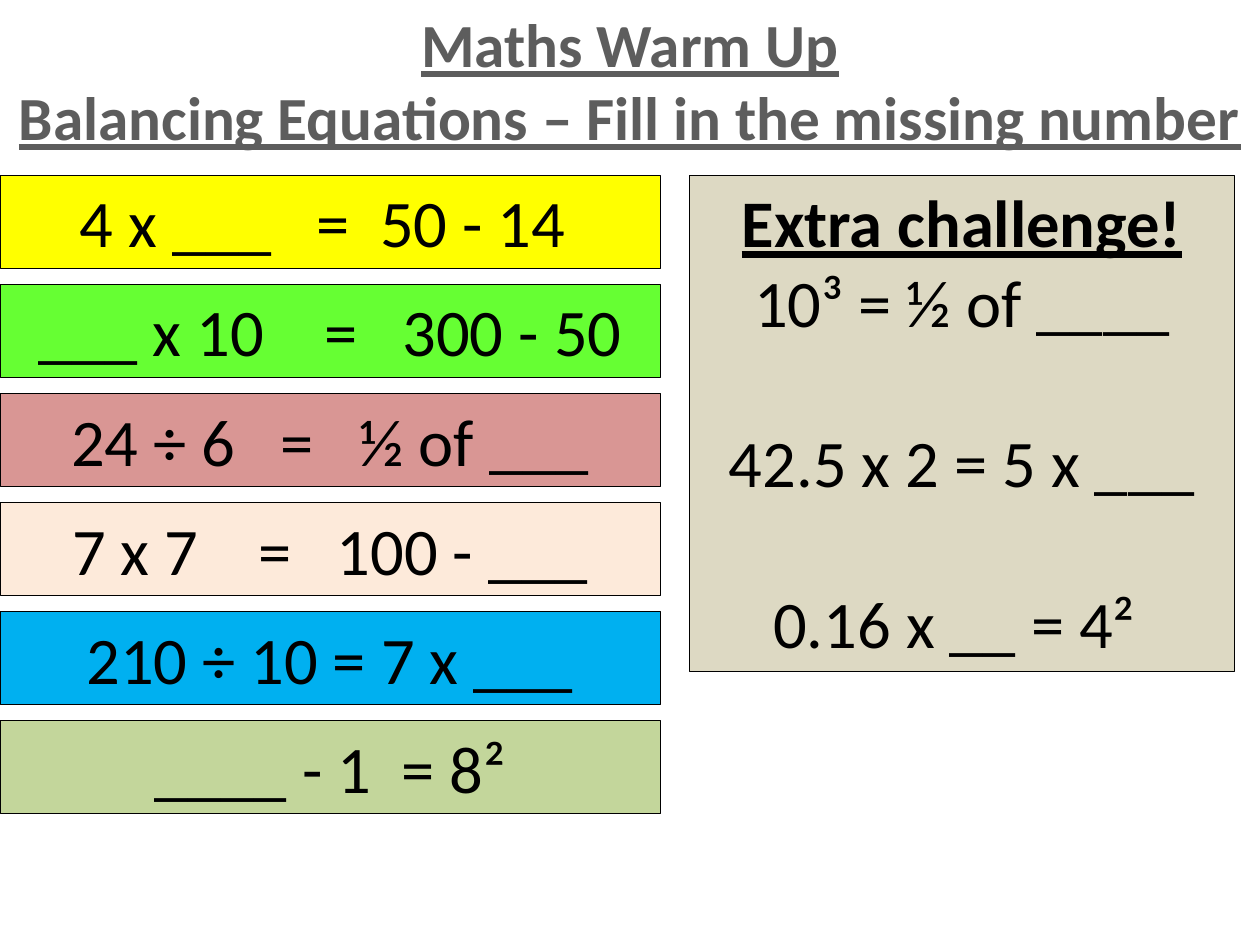
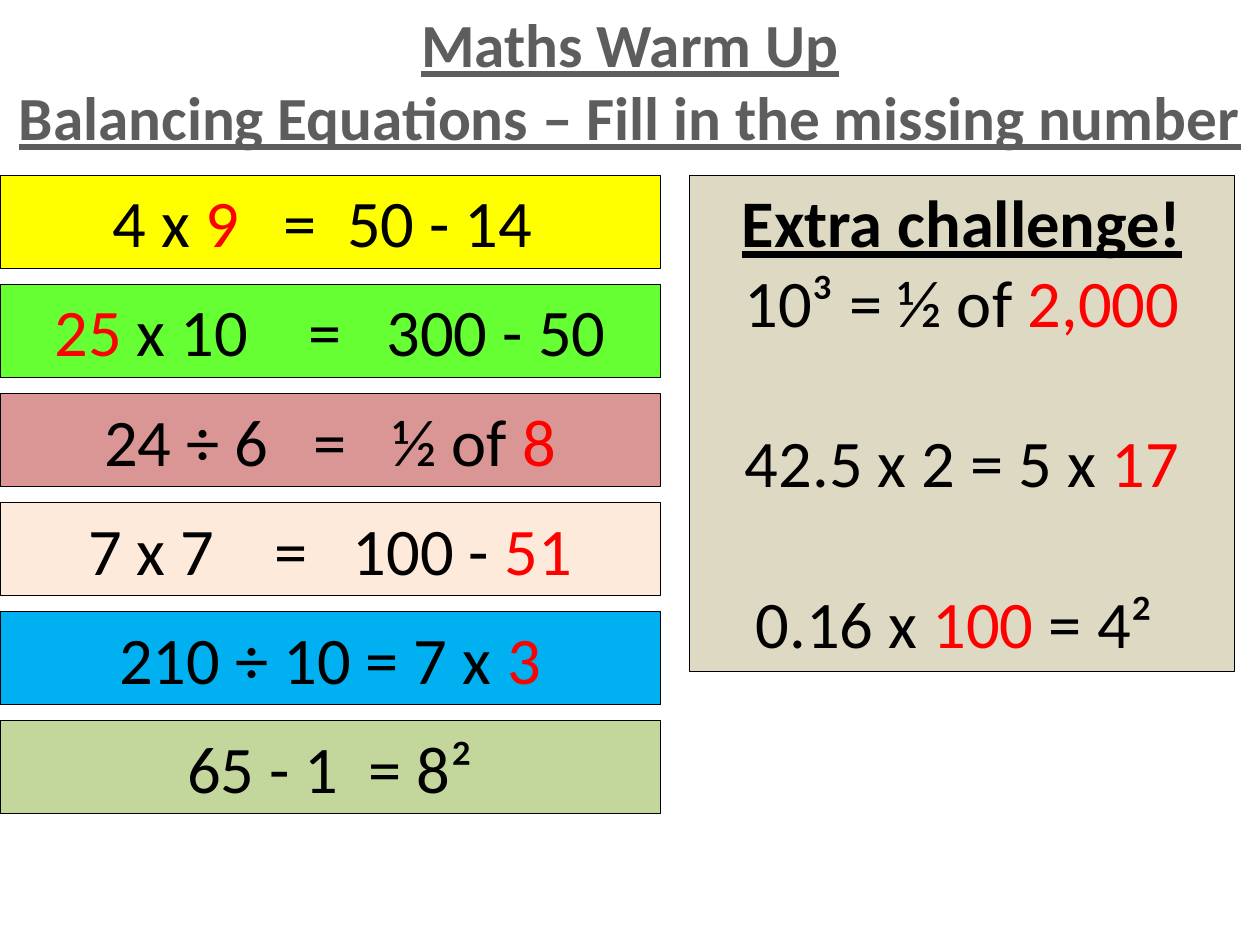
from dataclasses import dataclass

from lxml.etree import SubElement
from pptx import Presentation
from pptx.dml.color import RGBColor
from pptx.enum.shapes import MSO_SHAPE
from pptx.enum.text import MSO_ANCHOR, PP_ALIGN
from pptx.oxml.ns import qn
from pptx.util import Inches, Pt


@dataclass(frozen=True)
class Theme:
    font: str = "Calibri"
    title_size: int = 35
    body_size: int = 38
    line_height: int = 46      # one line of body text, in points
    space_width: float = 8.59  # one space of body text, in points
    border: float = 0.5
    title_outline: float = 1.4
    ink: str = "000000"
    answer: str = "FF0000"
    outline: str = "FFFFFF"
    challenge: str = "DDD9C3"
    title_fade: tuple = ((0, "555555"), (49, "5D5D5D"), (50, "000000"),
                         (95, "000000"), (100, "000000"))


@dataclass(frozen=True)
class Box:
    """An area in grid cells."""
    left: float
    top: float
    width: float
    height: float

    def place(self):
        return [Inches(cells * CELL)
                for cells in (self.left, self.top, self.width, self.height)]

    def row(self, index, height, pitch):
        return Box(self.left, self.top + index * pitch, self.width, height)


@dataclass(frozen=True)
class Equation:
    """An equation with {} for the missing number."""
    text: str
    blank: str
    answer: str
    gaps: tuple = (1, 1)  # widths before and after the equals sign, in spaces
    fill: str = ""
    answer_color: str = Theme.answer


THEME = Theme()

# Grid of 100 columns by 75 rows
COLUMNS, ROWS, CELL = 100, 75, 0.1
TITLE = Box(0, 0, COLUMNS, 12.8)
QUESTIONS = Box(0, 13.9, 52.4, 50.7)
CHALLENGE = Box(54.7, 13.9, 43.3, 39.4)
BAR_HEIGHT, BAR_PITCH = 7.4, 8.66

TITLE_LINES = ("Maths Warm Up", "Balancing Equations – Fill in the missing number")
WARM_UP = (
    Equation("4 x {} = 50 - 14 ", "___", "9", (3, 2), "FFFF00"),
    Equation("{} x 10 = 300 - 50", "___", "25", (4, 3), "66FF33"),
    Equation("24 ÷ 6 = ½ of {}", "___", "8", (3, 3), "D99694"),
    Equation("7 x 7 = 100 - {}", "___", "51", (4, 3), "FDEADA"),
    Equation("210 ÷ 10 = 7 x {}", "___", "3", fill="00B0F0"),
    Equation("{} - 1 = 8²", "____", "65", (2, 1), "C3D69B", THEME.ink),
)
EXTRA = (
    Equation("10³ = ½ of {}", "____", "2,000"),
    Equation("42.5 x 2 = 5 x {}", "___", "17"),
    Equation("0.16 x {} = 4² ", "__", "100"),
)


def add_text(paragraph, text, size=THEME.body_size, color=THEME.ink,
             bold=False, underline=False, tracking=0):
    run = paragraph.add_run()
    run.text = text
    font = run.font
    font.name, font.size = THEME.font, Pt(size)
    font.bold, font.underline = bold, underline
    font.color.rgb = RGBColor.from_string(color)
    if tracking:
        run._r.get_or_add_rPr().set("spc", str(round(tracking * 100)))
    return run


def add_color(parent, color):
    SubElement(parent, qn("a:srgbClr"), val=color)


def fade_title(run):
    """White outline and a vertical fade on the letters."""
    properties = run._r.get_or_add_rPr()
    properties.remove(properties.find(qn("a:solidFill")))
    outline = SubElement(properties, qn("a:ln"), w=str(Pt(THEME.title_outline)))
    add_color(SubElement(outline, qn("a:solidFill")), THEME.outline)
    fade = SubElement(properties, qn("a:gradFill"))
    stops = SubElement(fade, qn("a:gsLst"))
    for percent, color in THEME.title_fade:
        add_color(SubElement(stops, qn("a:gs"), pos=str(percent * 1000)), color)
    SubElement(fade, qn("a:lin"), ang=str(90 * 60000))
    # The schema wants the typeface after outline and fill
    properties.append(properties.find(qn("a:latin")))


def centred_lines(frame, count):
    frame.word_wrap = True
    frame.vertical_anchor = MSO_ANCHOR.TOP
    lines = [frame.paragraphs[0]] + [frame.add_paragraph() for _ in range(count - 1)]
    for line in lines:
        line.alignment = PP_ALIGN.CENTER
    return lines


def add_panel(slide, box, fill):
    panel = slide.shapes.add_shape(MSO_SHAPE.RECTANGLE, *box.place())
    panel.shadow.inherit = False
    panel.fill.solid()
    panel.fill.fore_color.rgb = RGBColor.from_string(fill)
    panel.line.color.rgb = RGBColor.from_string(THEME.ink)
    panel.line.width = Pt(THEME.border)
    return panel.text_frame


def write_equation(line, equation, solved):
    number = equation.answer if solved else equation.blank
    color = equation.answer_color if solved else THEME.ink

    def write_side(side):
        before, missing, after = side.partition("{}")
        for text, ink in ((before, THEME.ink), (missing and number, color),
                          (after, THEME.ink)):
            if text:
                add_text(line, text, color=ink)

    def write_gap(spaces):
        add_text(line, " ", tracking=(spaces - 1) * THEME.space_width)

    left, right = equation.text.split(" = ")
    write_side(left)
    write_gap(equation.gaps[0])
    add_text(line, "=")
    write_gap(equation.gaps[1])
    write_side(right)


def add_title(slide, box):
    title = slide.shapes.add_textbox(*box.place()).text_frame
    for line, text in zip(centred_lines(title, len(TITLE_LINES)), TITLE_LINES):
        fade_title(add_text(line, text, size=THEME.title_size,
                            bold=True, underline=True))


def add_questions(slide, box, solved):
    for index, equation in enumerate(WARM_UP):
        bar = add_panel(slide, box.row(index, BAR_HEIGHT, BAR_PITCH), equation.fill)
        write_equation(centred_lines(bar, 1)[0], equation, solved)


def add_challenge(slide, box, solved):
    panel = add_panel(slide, box, THEME.challenge)
    heading, *lines = centred_lines(panel, 1 + len(EXTRA))
    add_text(heading, "Extra challenge!", bold=True, underline=True)
    for index, (line, equation) in enumerate(zip(lines, EXTRA)):
        line.space_before = Pt(THEME.line_height if index else 0)
        write_equation(line, equation, solved)


def add_warm_up_slide(deck, solved):
    slide = deck.slides.add_slide(deck.slide_layouts[6])
    add_title(slide, TITLE)
    add_questions(slide, QUESTIONS, solved)
    add_challenge(slide, CHALLENGE, solved)


def main():
    deck = Presentation()
    deck.slide_width, deck.slide_height = Inches(COLUMNS * CELL), Inches(ROWS * CELL)
    for solved in (False, True):
        add_warm_up_slide(deck, solved)
    deck.save("out.pptx")


if __name__ == "__main__":
    main()
